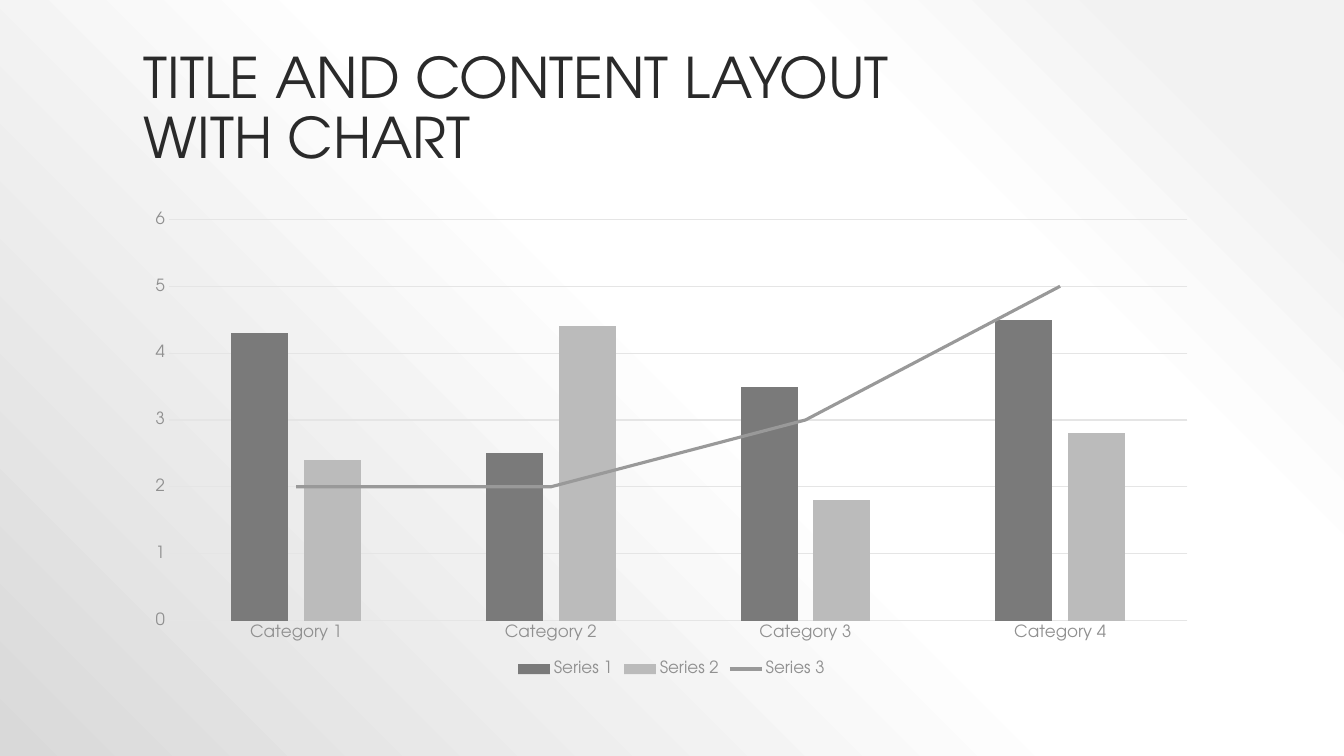
"""Build a title slide element over a combined column and line chart."""
from copy import deepcopy
from dataclasses import dataclass

from pptx import Presentation
from pptx import oxml
from pptx import util as u
from pptx.chart.data import CategoryChartData
from pptx.dml.color import RGBColor
from pptx.enum import chart as ch, text
from pptx.oxml import ns


@dataclass(frozen=True)
class Theme:
    font: str = "TeX Gyre Adventor"
    title: str = "2A2A2A"
    body: str = "545454"
    muted: str = "909090"
    grid: str = "E5E5E5"
    series: tuple = ("7A7A7A", "BBBBBB", "999999")
    backdrop: tuple = ((10, "F2F2F2"), (28, "FFFFFF"), (48, "FFFFFF"), (100, "D9D9D9"))
    title_size: int = 40
    label_size: int = 12
    body_size: int = 10


def px(n):
    return u.Emu(round(n * 914400 / 100.8))


def style_font(font, name, size, color):
    font.name, font.size = name, u.Pt(size)
    font.color.rgb = RGBColor.from_string(color)


def write(tf, content, *, name, size, color, spacing=1.0):
    p = tf.paragraphs[0]
    p.text = content
    p.line_spacing = spacing
    for r in p.runs:
        style_font(r.font, name, size, color)


def style_line(line, color, width):
    line.color.rgb = RGBColor.from_string(color)
    line.width = u.Pt(width)


class Deck:
    def __init__(self, theme):
        self.theme = theme
        self.prs = Presentation()
        self.prs.slide_width, self.prs.slide_height = px(1344), px(756)
        self.s = self.prs.slides.add_slide(self.prs.slide_layouts[6])

    def background(self):
        fill = self.s.background.fill
        fill.solid()
        solid = self.s.element.find(".//" + ns.qn("a:solidFill"))
        stops = "".join(
            f'<a:gs pos="{pos * 1000}"><a:srgbClr val="{color}"/></a:gs>'
            for pos, color in self.theme.backdrop)
        grad = oxml.parse_xml(
            f'<a:gradFill {ns.nsdecls("a")} rotWithShape="1"><a:gsLst>{stops}</a:gsLst>'
            '<a:path path="circle"><a:fillToRect l="100000" b="100000"/></a:path></a:gradFill>')
        solid.getparent().replace(solid, grad)

    def title(self, content, x, y, w, h):
        t = self.theme
        tf = self.s.shapes.add_textbox(px(x), px(y), px(w), px(h)).text_frame
        tf.word_wrap = True
        tf.vertical_anchor = text.MSO_ANCHOR.BOTTOM
        write(tf, content, name=t.font, size=t.title_size, color=t.title, spacing=0.9)

    def combo_chart(self, categories, series, x, y, w, h):
        t = self.theme
        data = CategoryChartData()
        data.categories = categories
        for name, values in series.items():
            data.add_series(name, values)
        chart = self.s.shapes.add_chart(
            ch.XL_CHART_TYPE.COLUMN_CLUSTERED, px(x), px(y), px(w), px(h), data).chart
        style_font(chart.font, t.font, t.body_size, t.body)
        chart.has_title = False
        chart.has_legend = True
        legend = chart.legend
        legend.position = ch.XL_LEGEND_POSITION.BOTTOM
        legend.include_in_layout = False
        style_font(legend.font, t.font, t.label_size, t.muted)
        self.axes(chart)

        self.last_series_as_line(chart)
        columns, trend = chart.plots
        columns.gap_width, columns.overlap = 219, -27
        columns.vary_by_categories = trend.vary_by_categories = False
        for ser, color in zip(columns.series, t.series):
            ser.format.fill.solid()
            ser.format.fill.fore_color.rgb = RGBColor.from_string(color)
        line = trend.series[0]
        line.smooth = False
        line.marker.style = ch.XL_MARKER_STYLE.NONE
        style_line(line.format.line, t.series[-1], 2.25)

    def axes(self, chart):
        t = self.theme
        cat, val = chart.category_axis, chart.value_axis
        for axis in (cat, val):
            axis.major_tick_mark = axis.minor_tick_mark = ch.XL_TICK_MARK.NONE
            style_font(axis.tick_labels.font, t.font, t.label_size, t.muted)
        style_line(cat.format.line, t.grid, 0.75)
        val.format.line.fill.background()
        val.has_major_gridlines = True
        style_line(val.major_gridlines.format.line, t.grid, 0.75)
        val.minimum_scale, val.maximum_scale, val.major_unit = 0, 6, 1

    def last_series_as_line(self, chart):
        bars = chart.plots[0]
        bar = bars.series[0]._element.getparent()
        ser = bars.series[-1]._element
        for flag in ser.findall(ns.qn("c:invertIfNegative")):
            ser.remove(flag)
        line = oxml.parse_xml(
            f'<c:lineChart {ns.nsdecls("c")}><c:grouping val="standard"/>'
            '<c:varyColors val="0"/><c:marker val="1"/></c:lineChart>')
        line.insert(2, ser)
        line.extend(deepcopy(ax) for ax in bar.findall(ns.qn("c:axId")))
        bar.addnext(line)


def main():
    deck = Deck(Theme())
    deck.background()
    deck.title("TITLE AND CONTENT LAYOUT \vWITH CHART", 134, 30, 1075, 146)
    deck.combo_chart(
        [f"Category {n}" for n in range(1, 5)],
        {"Series 1": (4.3, 2.5, 3.5, 4.5),
         "Series 2": (2.4, 4.4, 1.8, 2.8),
         "Series 3": (2, 2, 3, 5)},
        134, 202, 1075, 479)
    deck.prs.save("out.pptx")


if __name__ == "__main__":
    main()
